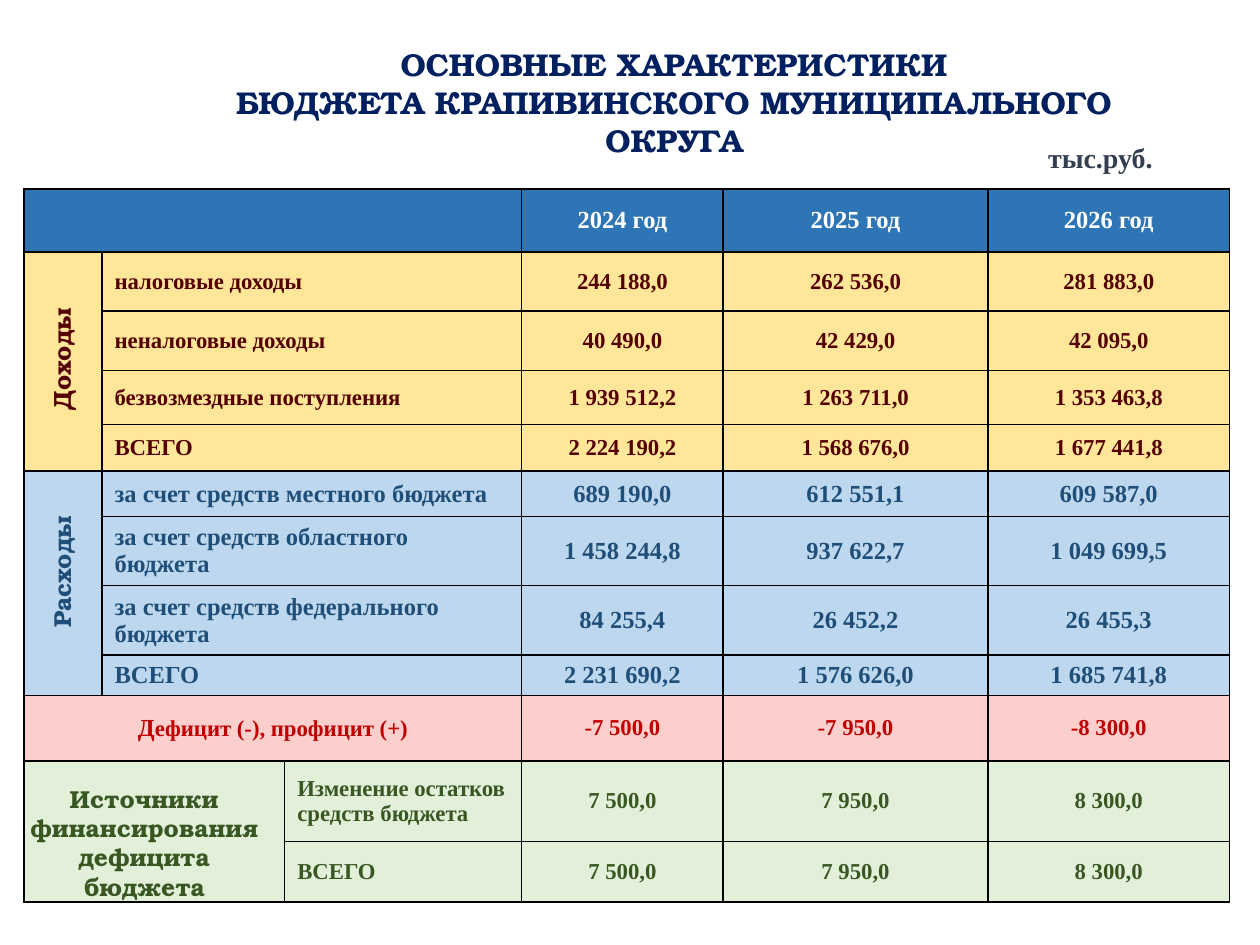
from lxml import etree
from pptx import Presentation
from pptx.dml.color import RGBColor
from pptx.enum.text import MSO_ANCHOR, PP_ALIGN
from pptx.oxml.ns import qn
from pptx.util import Inches, Pt

CENTER, LEFT = PP_ALIGN.CENTER, PP_ALIGN.LEFT
MIDDLE = MSO_ANCHOR.MIDDLE
SERIF, DISPLAY = "Times New Roman", "TeX Gyre Bonum"
COLORS = {
    "title": "002060", "unit": "333F50", "border": "000000",
    "header": "2E75B6", "header_text": "FFFFFF",
    "income": "FFE699", "income_text": "540000",
    "spending": "BDD7EE", "spending_text": "1F4E79",
    "deficit": "FCCFCC", "deficit_text": "C00000",
    "sources": "E2F0D9", "sources_text": "385723",
}
COLUMN_WIDTHS = [0.62, 1.45, 1.88, 1.6, 2.1, 1.92]
ROW_HEIGHTS = [0.5, 0.47, 0.47, 0.43, 0.37, 0.36, 0.55, 0.55, 0.32, 0.52, 0.64, 0.48]
FIRST_YEAR = 3

# Each section: name, text size, column of the label, rows of label and yearly values
SECTIONS = [
    ("header", 14, 0, [("", "2024 год", "2025 год", "2026 год")]),
    ("income", 13, 1, [
        ("налоговые доходы", "244 188,0", "262 536,0", "281 883,0"),
        ("неналоговые доходы", "40 490,0", "42 429,0", "42 095,0"),
        ("безвозмездные поступления", "1 939 512,2", "1 263 711,0", "1 353 463,8"),
        ("ВСЕГО", "2 224 190,2", "1 568 676,0", "1 677 441,8"),
    ]),
    ("spending", 14, 1, [
        ("за счет средств местного бюджета", "689 190,0", "612 551,1", "609 587,0"),
        ("за счет средств областного бюджета", "1 458 244,8", "937 622,7", "1 049 699,5"),
        ("за счет средств федерального бюджета", "84 255,4", "26 452,2", "26 455,3"),
        ("ВСЕГО", "2 231 690,2", "1 576 626,0", "1 685 741,8"),
    ]),
    ("deficit", 13, 0, [("Дефицит (-), профицит (+)", "-7 500,0", "-7 950,0", "-8 300,0")]),
    ("sources", 13, 2, [
        ("Изменение остатков средств бюджета", "7 500,0", "7 950,0", "8 300,0"),
        ("ВСЕГО", "7 500,0", "7 950,0", "8 300,0"),
    ]),
]


class PageBuilder:
    def __init__(self, page):
        self.page = page

    def span(self, para, text, size, font, color):
        span = para.add_run()
        span.text = text
        span.font.size = Pt(size)
        span.font.name = font
        span.font.bold = True
        span.font.color.rgb = RGBColor.from_string(COLORS[color])

    def text(self, left, top, width, height, lines, size, color,
             font=DISPLAY, align=CENTER, rotation=0):
        box = self.page.shapes.add_textbox(
            Inches(left), Inches(top), Inches(width), Inches(height))
        box.rotation = rotation
        frame = box.text_frame
        frame.word_wrap = True
        for index, line in enumerate(lines):
            para = frame.add_paragraph() if index else frame.paragraphs[0]
            para.alignment = align
            self.span(para, line, size, font, color)

    def table(self, left, top, widths, heights):
        frame = self.page.shapes.add_table(
            len(heights), len(widths), Inches(left), Inches(top),
            Inches(sum(widths)), Inches(sum(heights)))
        table = frame.table
        table.first_row = table.horz_banding = False
        for column, width in zip(table.columns, widths):
            column.width = Inches(width)
        for row, height in zip(table.rows, heights):
            row.height = Inches(height)
        return table

    def cell_style(self, cell, fill):
        cell.margin_left = cell.margin_right = Inches(0.1)
        cell.margin_top = cell.margin_bottom = 0
        cell.vertical_anchor = MIDDLE
        # Borders come before the fill in the cell properties
        properties = cell._tc.get_or_add_tcPr()
        for side in ("a:lnL", "a:lnR", "a:lnT", "a:lnB"):
            line = etree.SubElement(properties, qn(side), w=str(Pt(1)))
            solid = etree.SubElement(line, qn("a:solidFill"))
            etree.SubElement(solid, qn("a:srgbClr"), val=COLORS["border"])
        cell.fill.solid()
        cell.fill.fore_color.rgb = RGBColor.from_string(COLORS[fill])

    def cell_text(self, cell, pieces, color, align):
        cell.margin_top = cell.margin_bottom = Inches(0.04)
        para = cell.text_frame.paragraphs[0]
        para.alignment = align
        for text, size in pieces:
            self.span(para, text, size, SERIF, color)

    def section(self, table, first_row, name, size, label_column, rows):
        color = name + "_text"
        last_row = first_row + len(rows) - 1
        for row, (label, *values) in enumerate(rows, first_row):
            for column in range(len(COLUMN_WIDTHS)):
                self.cell_style(table.cell(row, column), name)
            label_cell = table.cell(row, label_column)
            if label_column < FIRST_YEAR - 1:
                label_cell.merge(table.cell(row, FIRST_YEAR - 1))
            if name == "deficit":
                pieces = [(label[0], size + 1), (label[1:], size)]
                self.cell_text(label_cell, pieces, color, CENTER)
            elif label:
                self.cell_text(label_cell, [(label, size)], color, LEFT)
            for column, value in enumerate(values, FIRST_YEAR):
                self.cell_text(table.cell(row, column), [(value, size)], color, CENTER)
        # Heading area to the left of the labels
        if label_column:
            table.cell(first_row, 0).merge(table.cell(last_row, label_column - 1))
        return last_row + 1


def main():
    deck = Presentation()
    deck.slide_width, deck.slide_height = Inches(10), Inches(7.5)
    builder = PageBuilder(deck.slides.add_slide(deck.slide_layouts[6]))

    # Budget table
    table = builder.table(0.19, 1.5, COLUMN_WIDTHS, ROW_HEIGHTS)
    row = 0
    for section in SECTIONS:
        row = builder.section(table, row, *section)

    # Title
    builder.text(1.75, 0.31, 7.2, 1.31,
                 ["ОСНОВНЫЕ ХАРАКТЕРИСТИКИ",
                  "БЮДЖЕТА КРАПИВИНСКОГО МУНИЦИПАЛЬНОГО ОКРУГА"], 18, "title")

    # Section headings
    builder.text(-0.26, 2.68, 1.5, 0.34, ["Доходы"], 14, "income_text", rotation=270)
    builder.text(-0.3, 4.37, 1.58, 0.34, ["Расходы"], 14, "spending_text", rotation=270)
    builder.text(0.04, 6.17, 2.21, 1.04,
                 ["Источники финансирования дефицита бюджета"], 14, "sources_text")

    # Unit of measure
    builder.text(8.22, 1.07, 1.36, 0.37, ["тыс.руб."], 16, "unit", SERIF, LEFT)

    deck.save("out.pptx")


if __name__ == "__main__":
    main()
